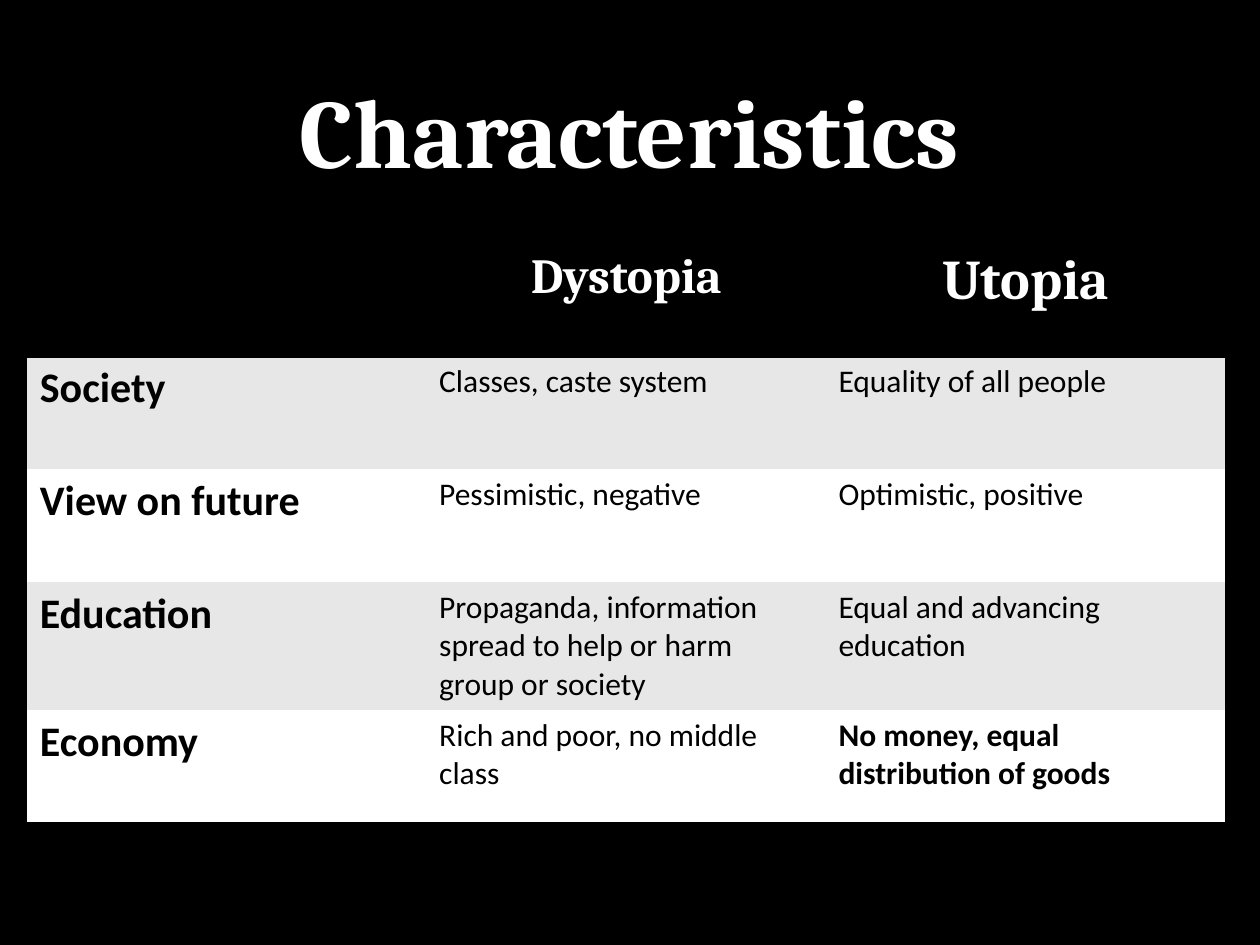
import pptx
import pptx.util
import pptx.dml.color
import pptx.enum.text
import pptx.oxml
import pptx.oxml.ns
from pptx.util import Cm, Pt

BLACK = pptx.dml.color.RGBColor(0x00, 0x00, 0x00)
WHITE = pptx.dml.color.RGBColor(0xFF, 0xFF, 0xFF)
GREY = pptx.dml.color.RGBColor(0xE7, 0xE7, 0xE7)
CENTER = pptx.enum.text.PP_ALIGN.CENTER
NO_GRID_STYLE = "{2D5ABB26-0587-4C30-8999-92F81FD0307C}"

HEADING = "Characteristics"
COLUMN_HEADS = [("", 28), ("Dystopia", 28), ("Utopia", 32)]
TRAITS = [
    ("Society", "Classes, caste system", "Equality of all people"),
    ("View on future", "Pessimistic, negative", "Optimistic, positive"),
    ("Education", "Propaganda, information spread to help or harm group or society",
     "Equal and advancing education"),
    ("Economy", "Rich and poor, no middle class",
     "No money, equal distribution of goods"),
]
BOLD_ANSWERS = {"No money, equal distribution of goods"}
COLUMN_WIDTH = Cm(8.05)
ROW_HEIGHT = Cm(2.28)


def write(paragraph, text, face, size, color, bold):
    paragraph.text = text
    paragraph.font.name = face
    paragraph.font.size = Pt(size)
    paragraph.font.color.rgb = color
    paragraph.font.bold = bold


def fill_cell(cell, color, edges):
    properties = cell._tc.get_or_add_tcPr()
    for edge in edges:
        properties.append(pptx.oxml.parse_xml(
            f'<a:{edge} {pptx.oxml.ns.nsdecls("a")} w="{Pt(2)}"><a:solidFill>'
            f'<a:srgbClr val="{BLACK}"/></a:solidFill></a:{edge}>'))
    cell.fill.solid()
    cell.fill.fore_color.rgb = color


deck = pptx.Presentation()
deck.slide_width, deck.slide_height = Cm(25.4), Cm(19.05)
slide = deck.slides.add_slide(deck.slide_layouts[5])
slide.background.fill.solid()
slide.background.fill.fore_color.rgb = BLACK

title = slide.shapes.title
title.left, title.top, title.width, title.height = Cm(2.16), Cm(0.3), Cm(21.06), Cm(4.6)
title.text_frame.vertical_anchor = pptx.enum.text.MSO_ANCHOR.MIDDLE
heading = title.text_frame.paragraphs[0]
write(heading, HEADING, "Cambria", 56, WHITE, True)
heading.alignment = CENTER

row_count, column_count = len(TRAITS) + 1, len(COLUMN_HEADS)
comparison_frame = slide.shapes.add_table(
    row_count, column_count, Cm(0.55), Cm(4.9),
    COLUMN_WIDTH * column_count, ROW_HEIGHT * row_count)
comparison = comparison_frame.table
comparison._tbl.tblPr.find(pptx.oxml.ns.qn("a:tableStyleId")).text = NO_GRID_STYLE
for column in comparison.columns:
    column.width = COLUMN_WIDTH
for row in comparison.rows:
    row.height = ROW_HEIGHT

for column_index, (head, size) in enumerate(COLUMN_HEADS):
    cell = comparison.cell(0, column_index)
    fill_cell(cell, BLACK, ["lnT", "lnB"])
    paragraph = cell.text_frame.paragraphs[0]
    write(paragraph, head, "Cambria", size, WHITE, True)
    paragraph.alignment = CENTER

for row_index, trait in enumerate(TRAITS, start=1):
    edges = ["lnB"] if row_index == len(TRAITS) else []
    for column_index, text in enumerate(trait):
        cell = comparison.cell(row_index, column_index)
        fill_cell(cell, GREY if row_index % 2 else WHITE, edges)
        is_label = column_index == 0
        write(cell.text_frame.paragraphs[0], text, "Calibri", 24 if is_label else 18,
              BLACK, is_label or text in BOLD_ANSWERS)

deck.save("out.pptx")
